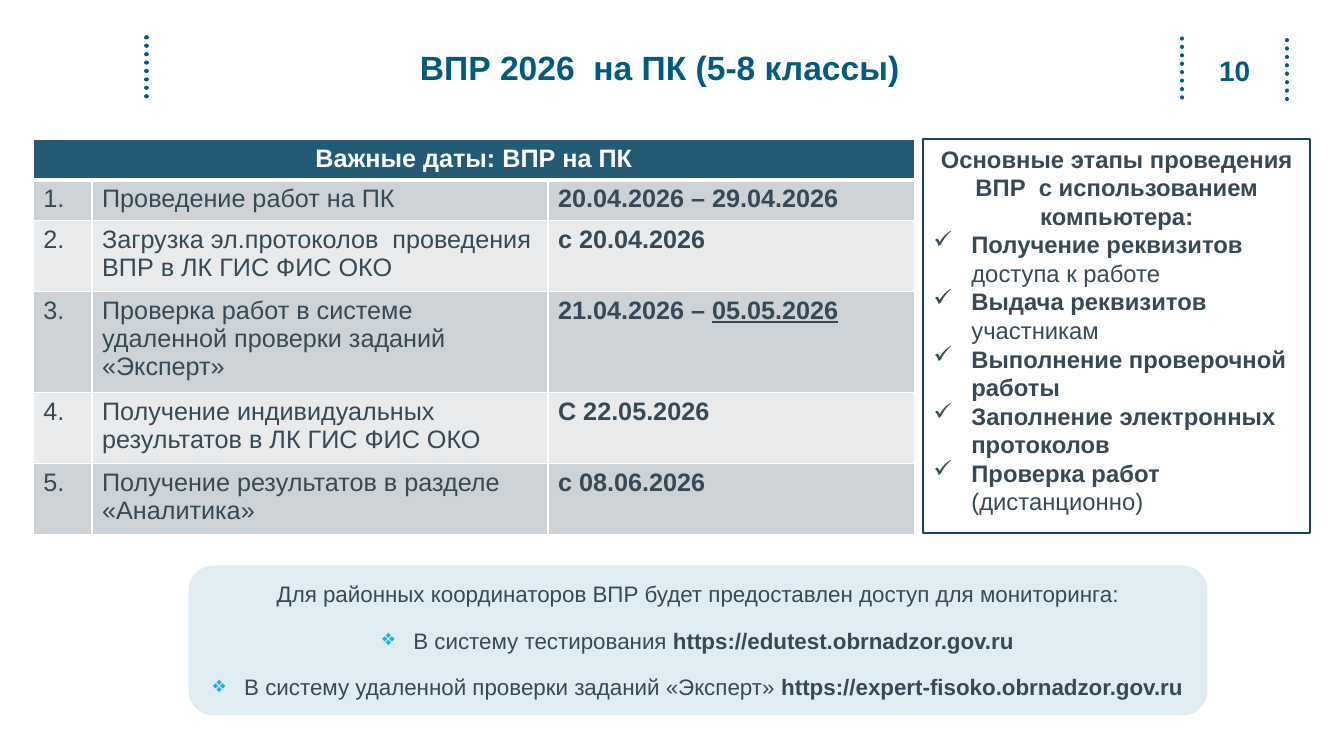
from dataclasses import dataclass
from typing import NamedTuple

from lxml.etree import SubElement
from pptx import Presentation
from pptx.dml.color import RGBColor
from pptx.enum.dml import MSO_LINE
from pptx.enum.shapes import MSO_CONNECTOR, MSO_SHAPE
from pptx.enum.text import MSO_ANCHOR, PP_ALIGN
from pptx.oxml.ns import qn
from pptx.util import Cm, Pt


@dataclass(frozen=True)
class Theme:
    font: str = "Arial"
    accent: str = "005B7E"
    body: str = "374955"
    white: str = "FFFFFF"
    header: str = "235B77"
    odd_row: str = "CDD2D6"
    even_row: str = "E8EAEC"
    frame: str = "1A4358"
    note: str = "DFEDF3"
    diamond: str = "1CADE4"
    title_size: int = 24
    number_size: int = 20
    table_size: int = 18
    stages_size: int = 17
    note_size: int = 16


class Box(NamedTuple):
    left: float
    top: float
    width: float
    height: float

    def lengths(self) -> list:
        return [Cm(side) for side in self]


class Part(NamedTuple):
    text: str
    bold: bool = False
    underline: bool = False


class Bullet(NamedTuple):
    char: str
    indent: float
    color: str


class DottedLine(NamedTuple):
    x: float
    top: float
    bottom: float


class DateRow(NamedTuple):
    event: str
    dates: list[Part]
    height: float


THEME = Theme()
CHECK = Bullet("✓", 0.96, THEME.body)
DIAMOND = Bullet("❖", 0.79, THEME.diamond)

DOTTED_LINES = [
    DottedLine(3.69, 0.94, 2.51),
    DottedLine(29.79, 0.97, 2.51),
    DottedLine(32.43, 1.01, 2.51),
]
COLUMN_WIDTHS = [1.48, 11.49, 9.23]
HEADER_HEIGHT = 1.02
DATE_ROWS = [
    DateRow("Проведение работ на ПК", [Part("20.04.2026 – 29.04.2026", True)], 1.02),
    DateRow("Загрузка эл.протоколов  проведения ВПР в ЛК ГИС ФИС ОКО",
            [Part("с 20.04.2026", True)], 1.79),
    DateRow("Проверка работ в системе удаленной проверки заданий «Эксперт»",
            [Part("21.04.2026 – ", True), Part("05.05.2026", True, True)], 2.54),
    DateRow("Получение индивидуальных результатов в ЛК ГИС ФИС ОКО",
            [Part("С 22.05.2026", True)], 1.79),
    DateRow("Получение результатов в разделе «Аналитика»",
            [Part("с 08.06.2026", True)], 1.79),
]
STAGES_HEADING = "Основные этапы проведения ВПР  с использованием компьютера:"
STAGES = [
    [Part("Получение реквизитов ", True), Part("доступа к работе")],
    [Part("Выдача реквизитов ", True), Part("участникам")],
    [Part("Выполнение проверочной работы", True)],
    [Part("Заполнение электронных протоколов", True)],
    [Part("Проверка работ ", True), Part("(дистанционно)")],
]
ACCESS_HEADING = "Для районных координаторов ВПР будет предоставлен доступ для мониторинга:"
ACCESS_LINKS = [
    [Part("В систему тестирования "), Part("https://edutest.obrnadzor.gov.ru", True)],
    [Part("В систему удаленной проверки заданий «Эксперт» "),
     Part("https://expert-fisoko.obrnadzor.gov.ru", True)],
]


def rgb(color: str) -> RGBColor:
    return RGBColor.from_string(color)


def write(paragraph, parts: list[Part], size: int, color: str = THEME.body,
          align=PP_ALIGN.LEFT) -> None:
    paragraph.alignment = align
    for part in parts:
        run = paragraph.add_run()
        run.text = part.text
        run.font.name = THEME.font
        run.font.size = Pt(size)
        run.font.bold = part.bold
        run.font.underline = part.underline
        run.font.color.rgb = rgb(color)


def add_bullet(paragraph, bullet: Bullet) -> None:
    properties = paragraph._p.get_or_add_pPr()
    properties.set("marL", str(Cm(bullet.indent)))
    properties.set("indent", str(-Cm(bullet.indent)))
    bullet_color = SubElement(properties, qn("a:buClr"))
    SubElement(bullet_color, qn("a:srgbClr"), val=bullet.color)
    SubElement(properties, qn("a:buChar"), char=bullet.char)


def add_dotted_line(slide, dotted: DottedLine) -> None:
    connector = slide.shapes.add_connector(
        MSO_CONNECTOR.STRAIGHT,
        Cm(dotted.x), Cm(dotted.top), Cm(dotted.x), Cm(dotted.bottom))
    connector.line.color.rgb = rgb(THEME.accent)
    connector.line.width = Pt(3)
    connector.line.dash_style = MSO_LINE.ROUND_DOT
    connector.get_or_add_ln().set("cap", "rnd")
    SubElement(connector._element.spPr, qn("a:effectLst"))


def add_heading(slide, box: Box, text: str, size: int):
    frame = slide.shapes.add_textbox(*box.lengths()).text_frame
    frame.word_wrap = True
    frame.vertical_anchor = MSO_ANCHOR.MIDDLE
    write(frame.paragraphs[0], [Part(text, True)], size, THEME.accent, PP_ALIGN.CENTER)
    return frame.paragraphs[0]


def style_cell(cell, fill: str, top: int = 1, bottom: int = 1) -> None:
    """Fill the cell and give it white borders; top and bottom are in points."""
    properties = cell._tc.get_or_add_tcPr()
    for side, width in {"L": 1, "R": 1, "T": top, "B": bottom}.items():
        border = SubElement(properties, qn(f"a:ln{side}"), w=str(Pt(width)))
        solid = SubElement(border, qn("a:solidFill"))
        SubElement(solid, qn("a:srgbClr"), val=THEME.white)
    cell.fill.solid()
    cell.fill.fore_color.rgb = rgb(fill)


def add_dates_table(slide, box: Box) -> None:
    table = slide.shapes.add_table(
        len(DATE_ROWS) + 1, len(COLUMN_WIDTHS), *box.lengths()).table
    for column, width in zip(table.columns, COLUMN_WIDTHS):
        column.width = Cm(width)
    table.rows[0].height = Cm(HEADER_HEIGHT)
    for cell in table.rows[0].cells:
        style_cell(cell, THEME.header, bottom=3)
    header = table.cell(0, 0)
    header.merge(table.cell(0, len(COLUMN_WIDTHS) - 1))
    write(header.text_frame.paragraphs[0], [Part("Важные даты: ВПР на ПК", True)],
          THEME.table_size, THEME.white, PP_ALIGN.CENTER)
    for number, date_row in enumerate(DATE_ROWS, start=1):
        table.rows[number].height = Cm(date_row.height)
        fill = THEME.odd_row if number % 2 else THEME.even_row
        contents = [[Part(f"{number}.")], [Part(date_row.event)], date_row.dates]
        for cell, parts in zip(table.rows[number].cells, contents):
            style_cell(cell, fill, top=3 if number == 1 else 1)
            write(cell.text_frame.paragraphs[0], parts, THEME.table_size)


def add_panel(slide, preset, box: Box, anchor):
    panel = slide.shapes.add_shape(preset, *box.lengths())
    panel.shadow.inherit = False
    panel.text_frame.word_wrap = True
    panel.text_frame.vertical_anchor = anchor
    return panel


def add_stages(slide, box: Box) -> None:
    panel = add_panel(slide, MSO_SHAPE.RECTANGLE, box, MSO_ANCHOR.TOP)
    panel.fill.background()
    panel.line.color.rgb = rgb(THEME.frame)
    panel.line.width = Pt(1.5)
    frame = panel.text_frame
    write(frame.paragraphs[0], [Part(STAGES_HEADING, True)], THEME.stages_size,
          align=PP_ALIGN.CENTER)
    for stage in STAGES:
        paragraph = frame.add_paragraph()
        add_bullet(paragraph, CHECK)
        write(paragraph, stage, THEME.stages_size)


def add_access_note(slide, box: Box) -> None:
    panel = add_panel(slide, MSO_SHAPE.ROUNDED_RECTANGLE, box, MSO_ANCHOR.MIDDLE)
    panel.fill.solid()
    panel.fill.fore_color.rgb = rgb(THEME.note)
    panel.line.fill.background()
    frame = panel.text_frame
    heading = frame.paragraphs[0]
    heading.space_after = Pt(2)
    write(heading, [Part(ACCESS_HEADING)], THEME.note_size, align=PP_ALIGN.CENTER)
    for link in ACCESS_LINKS:
        paragraph = frame.add_paragraph()
        add_bullet(paragraph, DIAMOND)
        paragraph.space_before, paragraph.space_after = Pt(12), Pt(2)
        write(paragraph, link, THEME.note_size, align=PP_ALIGN.CENTER)


def main() -> None:
    presentation = Presentation()
    presentation.slide_width, presentation.slide_height = Cm(33.87), Cm(19.05)
    slide = presentation.slides.add_slide(presentation.slide_layouts[6])
    for dotted in DOTTED_LINES:
        add_dotted_line(slide, dotted)
    add_heading(slide, Box(30.43, 1.09, 1.37, 1.35), "10", THEME.number_size)
    title = add_heading(slide, Box(3.91, 1.02, 25.43, 1.47),
                        "ВПР 2026  на ПК (5-8 классы)", THEME.title_size)
    title.line_spacing = 0.9
    add_stages(slide, Box(23.27, 3.51, 9.75, 9.93))
    add_dates_table(slide, Box(0.84, 3.51, 22.2, 9.93))
    add_access_note(slide, Box(4.75, 14.25, 25.68, 3.78))
    presentation.save("out.pptx")


if __name__ == "__main__":
    main()
